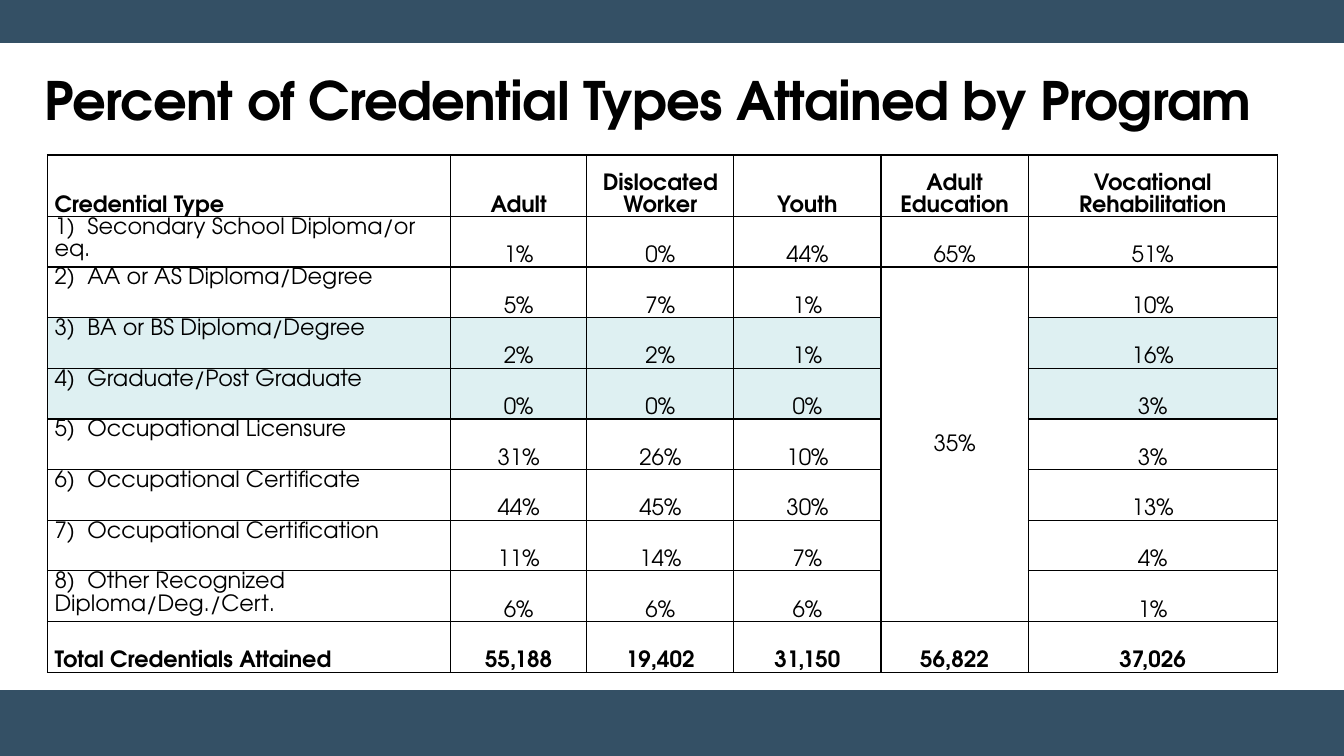
import dataclasses

import lxml.etree
import pptx
import pptx.dml.color
import pptx.enum.shapes
import pptx.enum.text
import pptx.oxml
import pptx.oxml.ns
import pptx.util

ALIGN = pptx.enum.text.PP_ALIGN
ANCHOR = pptx.enum.text.MSO_ANCHOR


@dataclasses.dataclass(frozen=True)
class Theme:
    font: str = "TeX Gyre Adventor"
    ink: str = "000000"
    band: str = "345065"
    highlight: str = "DEF0F2"
    title_size: float = 37.8
    table_size: float = 16
    rule: float = 1


class SlideBuilder:
    """Holds the theme and slide; lengths are on a grid of 100 columns by 100 rows."""

    def __init__(self, prs, theme):
        self.prs, self.theme = prs, theme
        self.s = prs.slides.add_slide(prs.slide_layouts[5])

    def x(self, columns):
        return round(self.prs.slide_width * columns / 100)

    def y(self, rows):
        return round(self.prs.slide_height * rows / 100)

    def color(self, value):
        return pptx.dml.color.RGBColor.from_string(value)

    def add_run(self, p, text, size, bold):
        r = p.add_run()
        r.text = text
        r.font.name, r.font.size, r.font.bold = self.theme.font, pptx.util.Pt(size), bold
        r.font.color.rgb = self.color(self.theme.ink)
        return r

    def band(self, top, height):
        sp = self.s.shapes.add_shape(pptx.enum.shapes.MSO_SHAPE.RECTANGLE,
                                     0, self.y(top), self.x(100), self.y(height))
        sp.shadow.inherit = False
        sp.fill.solid()
        sp.fill.fore_color.rgb = sp.line.color.rgb = self.color(self.theme.band)
        sp.line.width = pptx.util.Pt(self.theme.rule)
        self.s.shapes.element.insert(2, sp.element)  # behind the title

    def title(self, text, left, top, width, height):
        sp = self.s.shapes.title
        sp.left, sp.top = self.x(left), self.y(top)
        sp.width, sp.height = self.x(width), self.y(height)
        tf = sp.text_frame
        tf.word_wrap = True
        tf.auto_size = pptx.enum.text.MSO_AUTO_SIZE.NONE
        tf.vertical_anchor = ANCHOR.BOTTOM
        p = tf.paragraphs[0]
        p.alignment, p.line_spacing = ALIGN.LEFT, 0.9
        r = self.add_run(p, text, self.theme.title_size, True)
        r.font._element.set("spc", "-50")

    def borders(self, cell):
        tc_pr = cell._tc.get_or_add_tcPr()
        for i, side in enumerate(("lnL", "lnR", "lnT", "lnB")):
            tc_pr.insert(i, pptx.oxml.parse_xml(
                f'<a:{side} {pptx.oxml.ns.nsdecls("a")} w="{pptx.util.Pt(self.theme.rule)}">'
                f'<a:solidFill><a:srgbClr val="{self.theme.ink}"/></a:solidFill></a:{side}>'))

    def cell(self, cell, text, align, anchor, bold, fill):
        cell.margin_left = cell.margin_right = self.x(0.53)
        cell.margin_top = cell.margin_bottom = 0
        cell.vertical_anchor = anchor
        if fill:
            cell.fill.solid()
            cell.fill.fore_color.rgb = self.color(fill)
        else:
            cell.fill.background()
        self.borders(cell)
        p = cell.text_frame.paragraphs[0]
        if "\t" in text:
            tabs = lxml.etree.SubElement(p._p.get_or_add_pPr(), pptx.oxml.ns.qn("a:tabLst"))
            lxml.etree.SubElement(tabs, pptx.oxml.ns.qn("a:tab"),
                                  pos=str(self.x(2.45)), algn="l")
        p.alignment, p.line_spacing = align, 1.07
        p.space_after = pptx.util.Pt(8)
        if text:
            self.add_run(p, text, self.theme.table_size, bold)

    def table(self, rows, left, top, widths, heights, highlighted, merged):
        tbl = self.s.shapes.add_table(len(rows), len(widths), self.x(left), self.y(top),
                                      self.x(sum(widths)), self.y(sum(heights))).table
        tbl.first_row = tbl.horz_banding = False
        for column, width in zip(tbl.columns, widths):
            column.width = self.x(width)
        for row, height in zip(tbl.rows, heights):
            row.height = self.y(height)
        first, last, merged_col = merged
        for i, values in enumerate(rows):
            outer = i in (0, len(rows) - 1)
            for j, text in enumerate(values):
                in_merge = j == merged_col and first <= i <= last
                anchor = ANCHOR.MIDDLE if in_merge else ANCHOR.BOTTOM
                if j == 0 and not outer:
                    anchor = ANCHOR.TOP
                fill = self.theme.highlight if i in highlighted and not in_merge else None
                self.cell(tbl.cell(i, j), text, ALIGN.CENTER if j else ALIGN.LEFT,
                          anchor, outer, fill)
        tbl.cell(first, merged_col).merge(tbl.cell(last, merged_col))


CREDENTIALS = [
    ("Credential Type", "Adult", "Dislocated Worker", "Youth", "Adult Education",
     "Vocational Rehabilitation"),
    ("1)\tSecondary School Diploma/or eq.", "1%", "0%", "44%", "65%", "51%"),
    ("2)\tAA or AS Diploma/Degree", "5%", "7%", "1%", "35%", "10%"),
    ("3)\tBA or BS Diploma/Degree", "2%", "2%", "1%", "", "16%"),
    ("4)\tGraduate/Post Graduate", "0%", "0%", "0%", "", "3%"),
    ("5)\tOccupational Licensure", "31%", "26%", "10%", "", "3%"),
    ("6)\tOccupational Certificate", "44%", "45%", "30%", "", "13%"),
    ("7)\tOccupational Certification", "11%", "14%", "7%", "", "4%"),
    ("8)\tOther Recognized Diploma/Deg./Cert.", "6%", "6%", "6%", "", "1%"),
    ("Total Credentials Attained", "55,188", "19,402", "31,150", "56,822", "37,026"),
]


def main():
    prs = pptx.Presentation()
    prs.slide_width, prs.slide_height = pptx.util.Inches(13.33), pptx.util.Inches(7.5)
    slide = SlideBuilder(prs, Theme())

    # Bands at the top and bottom edges
    slide.band(0, 5.6)
    slide.band(91.33, 8.67)

    # Title
    slide.title("Percent of Credential Types Attained by Program", 2.55, 0.53, 94.97, 17.6)

    # Credential table: rows 3 and 4 tinted, one Adult Education share for rows 2 to 8
    slide.table(CREDENTIALS, left=3.53, top=20.5,
                widths=[30, 10.13, 10.95, 10.95, 10.95, 18.53],
                heights=[8.13] + [6.7] * (len(CREDENTIALS) - 1),
                highlighted=(3, 4), merged=(2, 8, 4))

    prs.save("out.pptx")


if __name__ == "__main__":
    main()
